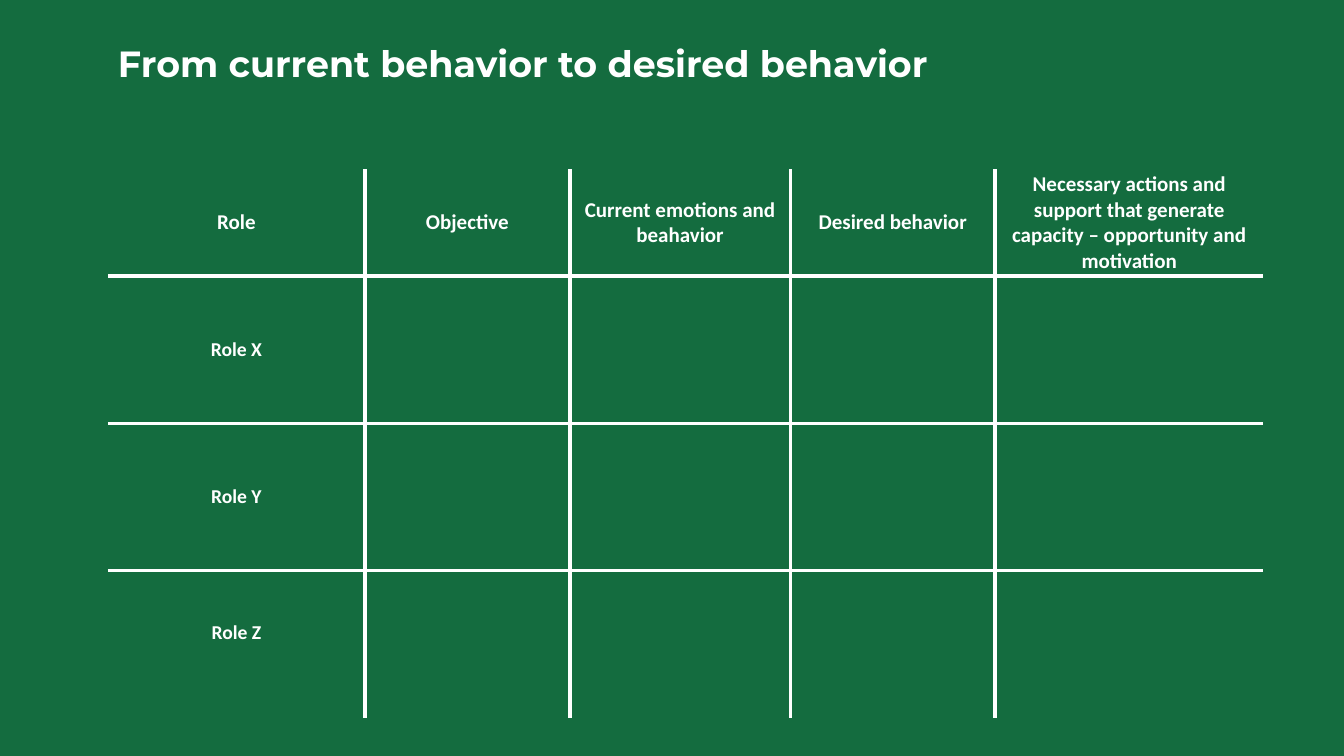
from lxml import etree
from pptx import Presentation
from pptx.dml.color import RGBColor
from pptx.enum import text
from pptx.oxml.ns import qn
from pptx.util import Inches, Pt

GREEN, WHITE = "146C3F", "FFFFFF"
TITLE = "From current behavior to desired behavior"
HEADERS = [
    "Role",
    "Objective",
    "Current emotions and beahavior",
    "Desired behavior",
    "Necessary actions and support that generate capacity – opportunity and motivation",
]
ROLES = ["Role X", "Role Y", "Role Z"]
COLUMN_WIDTHS = [2.55, 2.03, 2.19, 2.03, 2.66]
HEADER_HEIGHT, ROLE_HEIGHT = 1.02, 1.46
LEFT, TOP = 1.07, 1.68
GRID_WIDTH = 3


def color(value):
    return RGBColor.from_string(value)


def style(paragraph, font_name, size):
    font = paragraph.font
    font.name, font.size, font.bold = font_name, Pt(size), True
    font.color.rgb = color(WHITE)


def set_borders(cell, visible):
    """Draw the visible sides in white and clear the others."""
    properties = cell._tc.get_or_add_tcPr()
    for position, side in enumerate("LRTB"):
        line = etree.Element(qn(f"a:ln{side}"), w=str(Pt(GRID_WIDTH)))
        if visible[side]:
            fill = etree.SubElement(line, qn("a:solidFill"))
            etree.SubElement(fill, qn("a:srgbClr"), val=WHITE)
        else:
            etree.SubElement(line, qn("a:noFill"))
        properties.insert(position, line)


presentation = Presentation()
presentation.slide_width, presentation.slide_height = Inches(13.33), Inches(7.5)
slide = presentation.slides.add_slide(presentation.slide_layouts[5])
slide.background.fill.solid()
slide.background.fill.fore_color.rgb = color(GREEN)

# Title
title = slide.shapes.title
title.left, title.top = Inches(LEFT), Inches(0.29)
title.width, title.height = Inches(8.62), Inches(1.09)
frame = title.text_frame
frame.text = TITLE
frame.auto_size = text.MSO_AUTO_SIZE.NONE
frame.vertical_anchor = text.MSO_ANCHOR.MIDDLE
frame.margin_bottom = Inches(0.42)
heading = frame.paragraphs[0]
heading.alignment = text.PP_ALIGN.LEFT
heading.line_spacing = 0.9
style(heading, "Montserrat", 26)

# Table size
row_heights = [HEADER_HEIGHT] + [ROLE_HEIGHT] * len(ROLES)
rows, columns = len(row_heights), len(COLUMN_WIDTHS)
table = slide.shapes.add_table(
    rows, columns, Inches(LEFT), Inches(TOP),
    Inches(sum(COLUMN_WIDTHS)), Inches(sum(row_heights))).table
table.first_row = table.horz_banding = False
for column, width in zip(table.columns, COLUMN_WIDTHS):
    column.width = Inches(width)
for row, height in zip(table.rows, row_heights):
    row.height = Inches(height)

# Cells: only the inner grid lines show
contents = [HEADERS] + [[role] + [""] * (columns - 1) for role in ROLES]
for r, values in enumerate(contents):
    for c, value in enumerate(values):
        cell = table.cell(r, c)
        cell.text = value
        cell.fill.background()
        cell.vertical_anchor = text.MSO_ANCHOR.MIDDLE
        cell.margin_left = cell.margin_right = Inches(0.04)
        cell.margin_top = Inches(0.02)
        # The last role sits slightly above the middle of its row
        cell.margin_bottom = Inches(0.24 if r == rows - 1 else 0.02)
        paragraph = cell.text_frame.paragraphs[0]
        paragraph.alignment = text.PP_ALIGN.CENTER
        style(paragraph, "Calibri", 15 if r == 0 else 14)
        set_borders(cell, {"L": c > 0, "R": c < columns - 1,
                           "T": r > 0, "B": r < rows - 1})

presentation.save("out.pptx")
